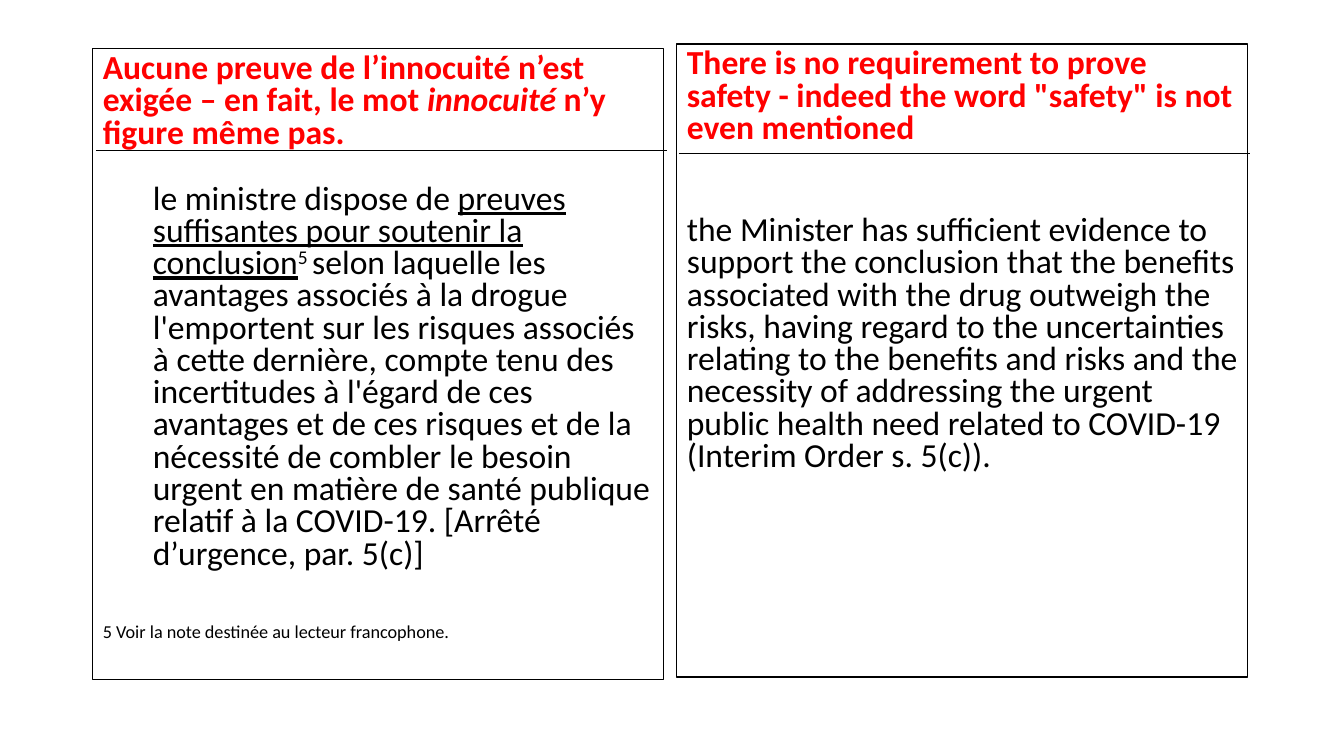
"""Build a bilingual slide setting French and English passages side by side."""
from pptx import Presentation
from pptx.dml.color import RGBColor
from pptx.enum.shapes import MSO_CONNECTOR, MSO_SHAPE
from pptx.enum.text import MSO_ANCHOR, PP_ALIGN
from pptx.oxml.ns import qn
from pptx.util import Pt

RECTANGLE = MSO_SHAPE.RECTANGLE
STRAIGHT = MSO_CONNECTOR.STRAIGHT
TOP = MSO_ANCHOR.TOP
LEFT = PP_ALIGN.LEFT

EMU_PER_PX = 914400 / 100.8
FONT = "Calibri"
COLORS = {"heading": "FF0000", "text": "000000", "border": "000000"}
SIZES = {"heading": 24, "text": 24, "note": 13}

FRENCH = [
    {"role": "heading", "before": 10, "indent": 0, "runs": [
        ("Aucune preuve de l’innocuité n’est exigée – en fait, le mot ", ""),
        ("innocuité ", "italic"),
        ("n’y figure même pas.", ""),
    ]},
    {"role": "text", "before": 24, "indent": 50, "runs": [
        ("le ministre dispose de ", ""),
        ("preuves suffisantes pour soutenir la conclusion", "underline"),
        ("5 ", "superscript"),
        ("selon laquelle les avantages associés à la drogue l'emportent sur "
         "les risques associés à cette dernière, compte tenu des incertitudes "
         "à l'égard de ces avantages et de ces risques et de la nécessité de "
         "combler le besoin urgent en matière de santé publique relatif à la "
         "COVID-19. [Arrêté d’urgence, par. 5(c)]", ""),
    ]},
    {"role": "note", "before": 38, "indent": 0, "runs": [
        ("5 Voir la note destinée au lecteur francophone.", ""),
    ]},
]
ENGLISH = [
    {"role": "heading", "before": 10, "indent": 0, "runs": [
        ('There is no requirement to prove safety - indeed the word "safety" '
         "is not even mentioned", ""),
    ]},
    {"role": "text", "before": 50, "indent": 0, "runs": [
        ("the Minister has sufficient evidence to support the conclusion that "
         "the benefits associated with the drug outweigh the risks, having "
         "regard to the uncertainties relating to the benefits and risks and "
         "the necessity of addressing the urgent public health need related "
         "to COVID-19 (Interim Order s. 5(c)).", ""),
    ]},
]
PANEL_WIDTH = 571
PANELS = [
    {"left": 93, "top": 49, "height": 631, "rule": (96, 150), "passages": FRENCH},
    {"left": 677, "top": 44, "height": 633, "rule": (679, 153), "passages": ENGLISH},
]


def px(length):
    return round(length * EMU_PER_PX)


def color(role):
    return RGBColor.from_string(COLORS[role])


def add_passage(paragraph, passage):
    role = passage["role"]
    paragraph.alignment = LEFT
    paragraph.line_spacing = 0.8
    paragraph.space_before = Pt(passage["before"])
    properties = paragraph._p.get_or_add_pPr()
    properties.set("marL", str(px(passage["indent"])))
    properties.set("indent", "0")
    for wording, style in passage["runs"]:
        run = paragraph.add_run()
        run.text = wording
        font = run.font
        font.name = FONT
        font.size = Pt(SIZES[role])
        font.bold = role == "heading"
        font.italic = style == "italic"
        font.underline = style == "underline"
        font.color.rgb = color("heading" if role == "heading" else "text")
        if style == "superscript":
            run._r.get_or_add_rPr().set("baseline", "30000")


def add_panel(slide, panel):
    box = slide.shapes.add_shape(
        RECTANGLE, px(panel["left"]), px(panel["top"]),
        px(PANEL_WIDTH), px(panel["height"]))
    box.shadow.inherit = False
    box.fill.background()
    box.line.color.rgb = color("border")
    box.line.width = Pt(0.75)
    frame = box.text_frame
    frame.word_wrap = True
    frame.vertical_anchor = TOP
    for index, passage in enumerate(panel["passages"]):
        paragraph = frame.add_paragraph() if index else frame.paragraphs[0]
        add_passage(paragraph, passage)


def add_rule(slide, left, top):
    rule = slide.shapes.add_connector(
        STRAIGHT, px(left), px(top), px(left + PANEL_WIDTH), px(top))
    rule.line.color.rgb = color("border")
    rule.line.width = Pt(0.5)
    properties = rule._element.spPr
    properties.append(properties.makeelement(qn("a:effectLst"), {}))


def main():
    deck = Presentation()
    deck.slide_width, deck.slide_height = px(1344), px(756)
    slide = deck.slides.add_slide(deck.slide_layouts[6])
    for panel in PANELS:
        add_panel(slide, panel)
    for panel in PANELS:
        add_rule(slide, *panel["rule"])
    deck.save("out.pptx")


if __name__ == "__main__":
    main()
